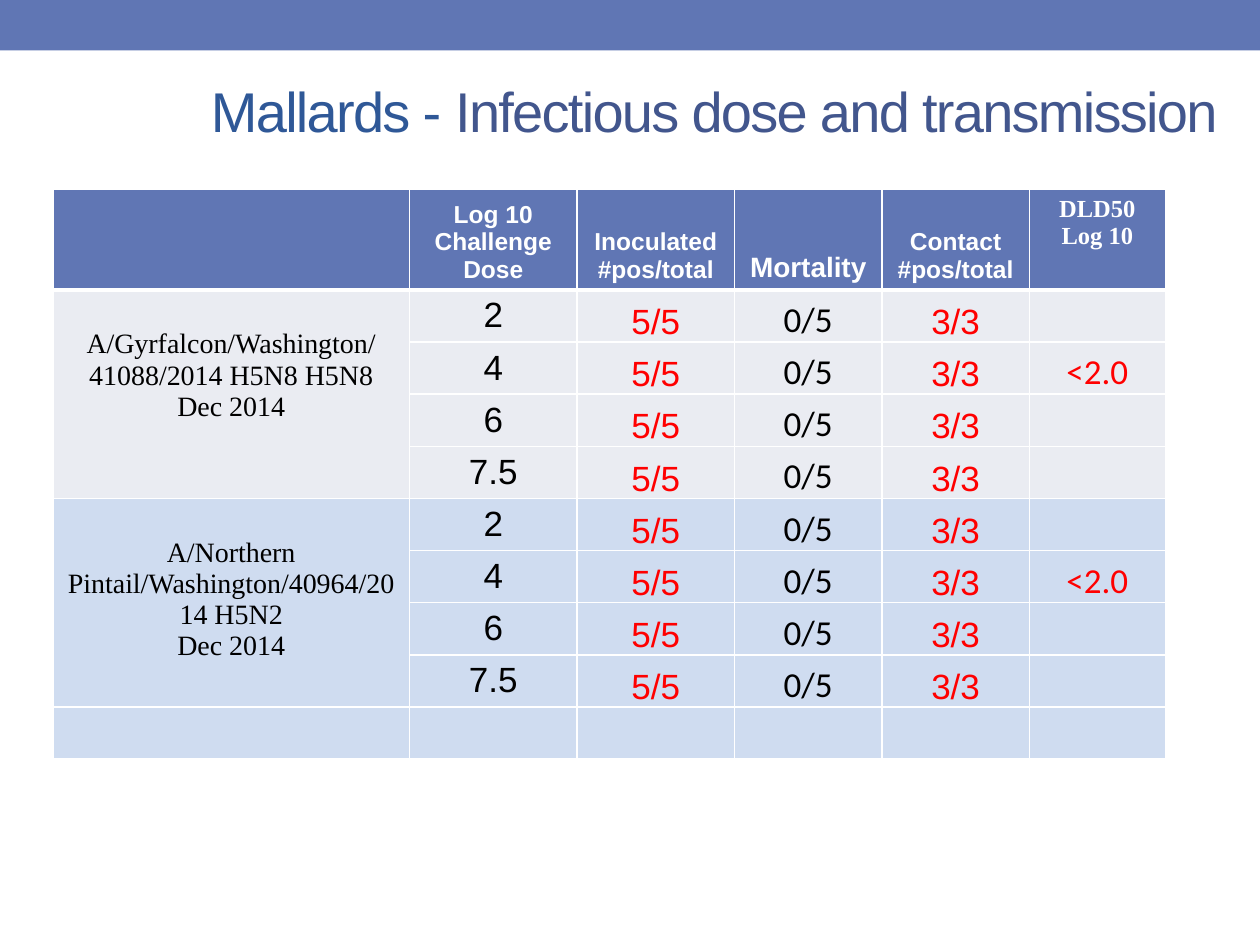
from pptx import Presentation
from pptx.dml.color import RGBColor as RGB
from pptx.enum.shapes import MSO_SHAPE as Shape
from pptx.enum.text import MSO_ANCHOR as Anchor, PP_ALIGN as Align
from pptx.oxml import parse_xml
from pptx.oxml.ns import nsdecls
from pptx.util import Inches, Pt

COLORS = {
    "bar": "6076B4", "white": "FFFFFF", "black": "000000", "red": "FF0000",
    "lead": "2F5897", "title": "42568D", "gray": "EAECF2", "blue": "CFDCF0",
}
SANS, SERIF, BODY = "Arial", "Times New Roman", "Calibri"

TITLE = [("Mallards -", "lead"), (" Infectious dose and transmission", "title")]
# lines, size, font, anchor
HEADS = [
    ([], 14, SANS, Anchor.BOTTOM),
    (["Log 10", "Challenge Dose"], 14, SANS, Anchor.BOTTOM),
    (["Inoculated #pos/total"], 14, SANS, Anchor.BOTTOM),
    (["Mortality"], 16, SANS, Anchor.BOTTOM),
    (["Contact #pos/total"], 14, SANS, Anchor.BOTTOM),
    (["DLD50", "Log 10"], 14, SERIF, Anchor.TOP),
]
DOSES = ["2", "4", "6", "7.5"]
STRAINS = [
    (["A/Gyrfalcon/Washington/41088/2014 H5N8 H5N8", "Dec 2014"], "gray"),
    (["A/Northern Pintail/Washington/40964/2014 H5N2", "Dec 2014"], "blue"),
]
# column, text, font, color
RESULTS = [(2, "5/5", SANS, "red"), (3, "0/5", BODY, "black"), (4, "3/3", SANS, "red")]
DLD_COL, DLD_DOSE, DLD = 5, "4", "<2.0"

WIDTHS = [2.83, 1.33, 1.25, 1.17, 1.17, 1.08]
HEAD_H, ROW_H = 0.77, 0.41
ROWS = 2 + len(STRAINS) * len(DOSES)


def rgb(name):
    return RGB.from_string(COLORS[name])


def add_run(para, text, size, font, color, bold=False):
    run = para.add_run()
    run.text = text
    run.font.size = Pt(size)
    run.font.name = font
    run.font.bold = bold
    run.font.color.rgb = rgb(color)
    return run


def write(cell, lines, size, font, color, anchor=Anchor.TOP, bold=False):
    cell.vertical_anchor = anchor
    frame = cell.text_frame
    for i, line in enumerate(lines):
        para = frame.add_paragraph() if i else frame.paragraphs[0]
        para.alignment = Align.CENTER
        add_run(para, line, size, font, color, bold)


def paint(cell, color, base=1):
    """Fill a cell and rule it in white; base is the bottom line's width."""
    props = cell._tc.get_or_add_tcPr()
    for side, width in (("L", 1), ("R", 1), ("T", 1), ("B", base)):
        props.append(parse_xml(
            f'<a:ln{side} {nsdecls("a")} w="{Pt(width)}"><a:solidFill>'
            f'<a:srgbClr val="{COLORS["white"]}"/></a:solidFill></a:ln{side}>'))
    cell.fill.solid()
    cell.fill.fore_color.rgb = rgb(color)


def tighten(cell):
    cell.margin_left = cell.margin_right = cell.margin_top = Inches(0.01)
    cell.margin_bottom = 0


def add_title(slide):
    box = slide.shapes.add_textbox(Inches(1.17), Inches(0.33), Inches(9), Inches(1.08))
    frame = box.text_frame
    frame.word_wrap = True
    frame.vertical_anchor = Anchor.MIDDLE
    para = frame.paragraphs[0]
    para.alignment = Align.CENTER
    for text, color in TITLE:
        run = add_run(para, text, 32, SANS, color)
        run.font._element.set("spc", "-100")


def add_results(slide):
    height = HEAD_H + (ROWS - 1) * ROW_H
    table = slide.shapes.add_table(
        ROWS, len(WIDTHS), Inches(0.42), Inches(1.5),
        Inches(sum(WIDTHS)), Inches(height)).table
    for col, width in zip(table.columns, WIDTHS):
        col.width = Inches(width)
    for i, row in enumerate(table.rows):
        row.height = Inches(ROW_H if i else HEAD_H)
        band = (i - 1) // len(DOSES)
        fill = STRAINS[min(band, len(STRAINS) - 1)][1] if i else "bar"
        for cell in row.cells:
            paint(cell, fill, 1 if i else 3)

    for col, (lines, size, font, anchor) in enumerate(HEADS):
        write(table.cell(0, col), lines, size, font, "white", anchor, True)

    for i, (lines, _) in enumerate(STRAINS):
        top = 1 + i * len(DOSES)
        name = table.cell(top, 0)
        name.merge(table.cell(top + len(DOSES) - 1, 0))
        name.margin_top = Inches(0.31)
        write(name, lines, 16, SERIF, "black")
        for row, dose in enumerate(DOSES, top):
            cell = table.cell(row, 1)
            cell.margin_bottom = Inches(0.03)
            write(cell, [dose], 20, SANS, "black")
            found = RESULTS + ([(DLD_COL, DLD, BODY, "red")] if dose == DLD_DOSE else [])
            for col, text, font, color in found:
                cell = table.cell(row, col)
                tighten(cell)
                write(cell, [text], 20, font, color, Anchor.BOTTOM)


def main():
    deck = Presentation()
    deck.slide_width, deck.slide_height = Inches(10), Inches(7.5)
    slide = deck.slides.add_slide(deck.slide_layouts[6])
    bar = slide.shapes.add_shape(Shape.RECTANGLE, 0, 0, Inches(10), Inches(0.4))
    bar.shadow.inherit = False
    bar.fill.solid()
    bar.fill.fore_color.rgb = rgb("bar")
    bar.line.fill.background()
    add_title(slide)
    add_results(slide)
    deck.save("out.pptx")


if __name__ == "__main__":
    main()
